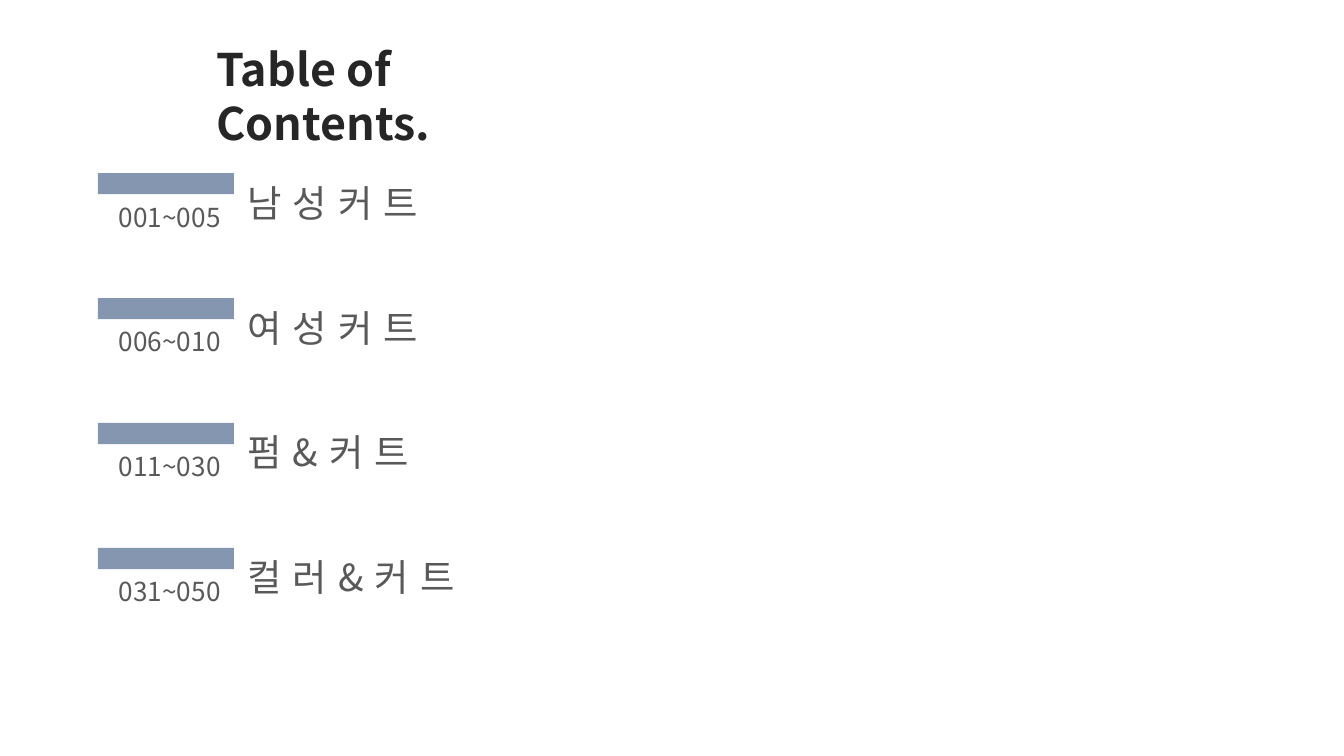
from lxml.etree import SubElement
from pptx import Presentation
from pptx.dml.color import RGBColor
from pptx.enum.shapes import MSO_SHAPE
from pptx.enum.text import MSO_AUTO_SIZE, PP_ALIGN
from pptx.oxml.ns import qn
from pptx.util import Cm, Pt

FONT = "Noto Sans CJK KR"
DARK, GRAY, BLUE = "262626", "595959", "8496B0"
LEFT, TOP, PITCH = 1.85, 3.27, 2.36
BAR_W, BAR_H = 2.57, 0.4

SECTIONS = [
    ("001~005", "남성커트", 4.22),
    ("006~010", "여성커트", 4.22),
    ("011~030", "펌&커트", 4.09),
    ("031~050", "컬러&커트", 5.0),
]


def color(hex_code):
    return RGBColor.from_string(hex_code)


def add_text(shapes, text, x, y, w, h, size, hex_code, bold=False,
             align=PP_ALIGN.LEFT, wrap=False, spacing=0):
    tf = shapes.add_textbox(Cm(x), Cm(y), Cm(w), Cm(h)).text_frame
    tf.word_wrap = wrap
    tf.auto_size = MSO_AUTO_SIZE.SHAPE_TO_FIT_TEXT
    p = tf.paragraphs[0]
    p.text = text
    p.alignment = align
    font = p.font
    font.name, font.size, font.bold = FONT, Pt(size), bold
    font.color.rgb = color(hex_code)
    # East Asian typeface and letter spacing
    props = p._p.pPr.find(qn("a:defRPr"))
    SubElement(props, qn("a:ea"), typeface=FONT)
    if spacing:
        props.set("spc", str(spacing * 100))


def add_bar(shapes, x, y, w, h):
    bar = shapes.add_shape(MSO_SHAPE.RECTANGLE, Cm(x), Cm(y), Cm(w), Cm(h))
    bar.shadow.inherit = False
    bar.fill.solid()
    bar.fill.fore_color.rgb = color(BLUE)
    bar.line.fill.background()


def add_section(s, y, pages, title, title_w):
    shapes = s.shapes.add_group_shape().shapes
    add_bar(shapes, LEFT, y, BAR_W, BAR_H)
    add_text(shapes, pages, LEFT, y + BAR_H, BAR_W, 0.86, 14, GRAY,
             align=PP_ALIGN.RIGHT, wrap=True)
    add_text(shapes, title, LEFT + BAR_W, y, title_w, 1.12, 20, GRAY,
             spacing=6)


def main():
    prs = Presentation()
    prs.slide_width, prs.slide_height = Cm(25.4), Cm(14.28)
    s = prs.slides.add_slide(prs.slide_layouts[6])

    # Heading
    add_text(s.shapes, "Table of\vContents.", 3.84, 0.66, 7.95, 1.27, 24,
             DARK, bold=True)

    # Sections with page ranges
    for i, (pages, title, title_w) in enumerate(SECTIONS):
        add_section(s, TOP + i * PITCH, pages, title, title_w)

    prs.save("out.pptx")


if __name__ == "__main__":
    main()
